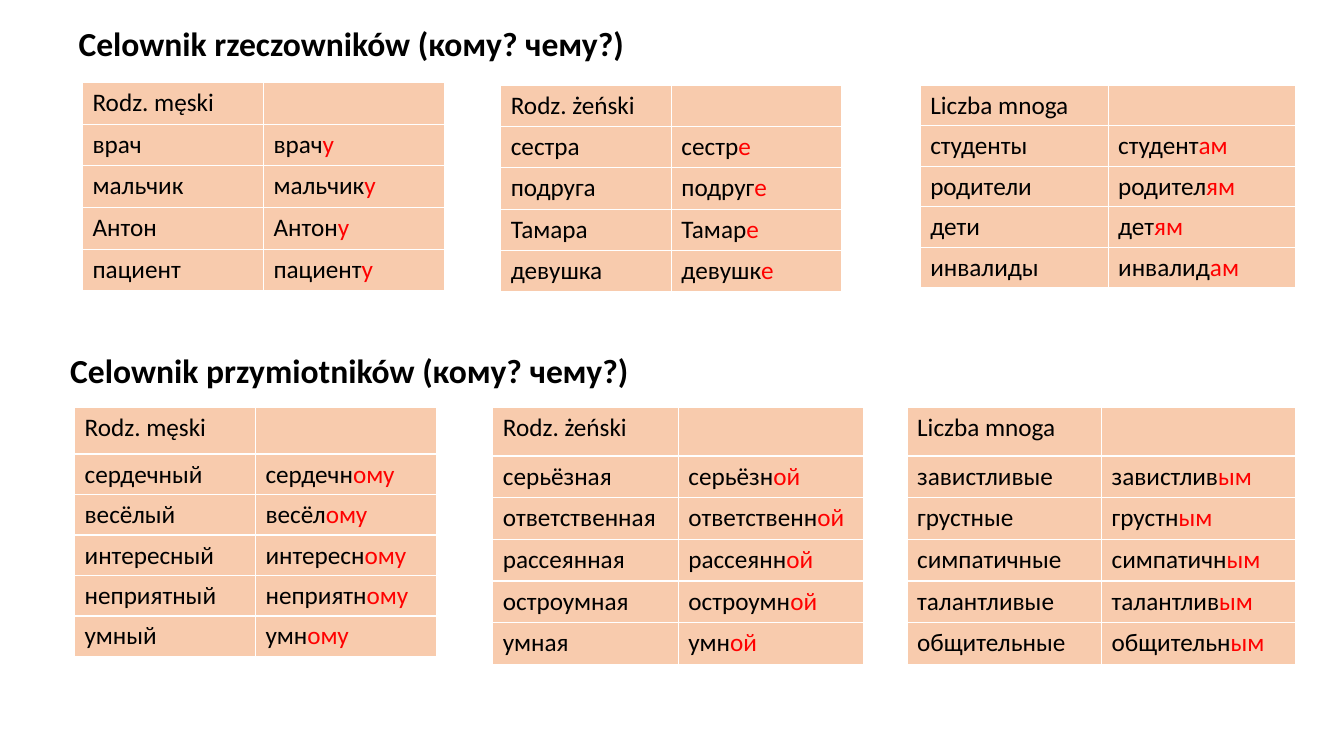
import pptx
import pptx.dml.color
import pptx.enum.text
import pptx.util

Cm = pptx.util.Cm
RGBColor = pptx.dml.color.RGBColor

BLACK = RGBColor(0x00, 0x00, 0x00)
RED = RGBColor(0xFF, 0x00, 0x00)
PEACH = RGBColor(0xF8, 0xCB, 0xAD)

# Headings: text, (left, top, width, height) in cm
HEADINGS = [
    ("Celownik rzeczowników (кому? чему?)", (1.73, 0.46, 18.4, 1.28)),
    ("Celownik przymiotników (кому? чему?)", (1.52, 8.69, 18.75, 1.28)),
]

# Words: stem, nominative ending, dative ending; lengths in cm
DECLENSIONS = [
    {"title": "Rodz. męski", "left": 2.08, "top": 2.08, "width": 9.12,
     "header": 1.05, "row": 1.05,
     "words": [("врач", "", "у"), ("мальчик", "", "у"), ("Антон", "", "у"),
               ("пациент", "", "у")]},
    {"title": "Rodz. żeński", "left": 12.62, "top": 2.15, "width": 8.6,
     "header": 1.04, "row": 1.04,
     "words": [("сестр", "а", "е"), ("подруг", "а", "е"), ("Тамар", "а", "е"),
               ("девушк", "а", "е")]},
    {"title": "Liczba mnoga", "left": 23.19, "top": 2.15, "width": 9.47,
     "header": 1.02, "row": 1.02,
     "words": [("студент", "ы", "ам"), ("родител", "и", "ям"), ("дет", "и", "ям"),
               ("инвалид", "ы", "ам")]},
    {"title": "Rodz. męski", "left": 1.88, "top": 10.26, "width": 9.12,
     "header": 1.18, "row": 1.02,
     "words": [("сердечн", "ый", "ому"), ("весёл", "ый", "ому"),
               ("интересн", "ый", "ому"), ("неприятн", "ый", "ому"),
               ("умн", "ый", "ому")]},
    {"title": "Rodz. żeński", "left": 12.42, "top": 10.26, "width": 9.35,
     "header": 1.23, "row": 1.05,
     "words": [("серьёзн", "ая", "ой"), ("ответственн", "ая", "ой"),
               ("рассеянн", "ая", "ой"), ("остроумн", "ая", "ой"),
               ("умн", "ая", "ой")]},
    {"title": "Liczba mnoga", "left": 22.86, "top": 10.26, "width": 9.8,
     "header": 1.23, "row": 1.05,
     "words": [("завистлив", "ыe", "ым"), ("грустн", "ыe", "ым"),
               ("симпатичн", "ыe", "ым"), ("талантлив", "ыe", "ым"),
               ("общительн", "ыe", "ым")]},
]

HEADING_FORMAT = {"name": "Calibri", "size": pptx.util.Pt(24), "bold": True}
CELL_FORMAT = {"name": "Calibri", "size": pptx.util.Pt(18), "bold": False}


def add_runs(paragraph, pieces, font_format):
    for text, color in pieces:
        run = paragraph.add_run()
        run.text = text
        for name, value in font_format.items():
            setattr(run.font, name, value)
        run.font.color.rgb = color


def add_heading(slide, text, box):
    frame = slide.shapes.add_textbox(*map(Cm, box)).text_frame
    frame.word_wrap = True
    frame.auto_size = pptx.enum.text.MSO_AUTO_SIZE.SHAPE_TO_FIT_TEXT
    add_runs(frame.paragraphs[0], [(text, BLACK)], HEADING_FORMAT)


def add_declension(slide, declension):
    words = declension["words"]
    rows = [[[(declension["title"], BLACK)], []]]
    for stem, nominative, dative in words:
        rows.append([[(stem + nominative, BLACK)], [(stem, BLACK), (dative, RED)]])
    heights = [declension["header"]] + [declension["row"]] * len(words)

    box = (declension["left"], declension["top"], declension["width"], sum(heights))
    table = slide.shapes.add_table(len(rows), 2, *map(Cm, box)).table
    table.horz_banding = False
    for row_index, (row, height) in enumerate(zip(rows, heights)):
        table.rows[row_index].height = Cm(height)
        for column_index, pieces in enumerate(row):
            cell = table.cell(row_index, column_index)
            cell.fill.solid()
            cell.fill.fore_color.rgb = PEACH
            add_runs(cell.text_frame.paragraphs[0], pieces, CELL_FORMAT)


# Slide
presentation = pptx.Presentation()
presentation.slide_width = Cm(33.87)
presentation.slide_height = Cm(19.05)
slide = presentation.slides.add_slide(presentation.slide_layouts[6])

# Headings and declension tables
for text, box in HEADINGS:
    add_heading(slide, text, box)
for declension in DECLENSIONS:
    add_declension(slide, declension)

presentation.save("out.pptx")
